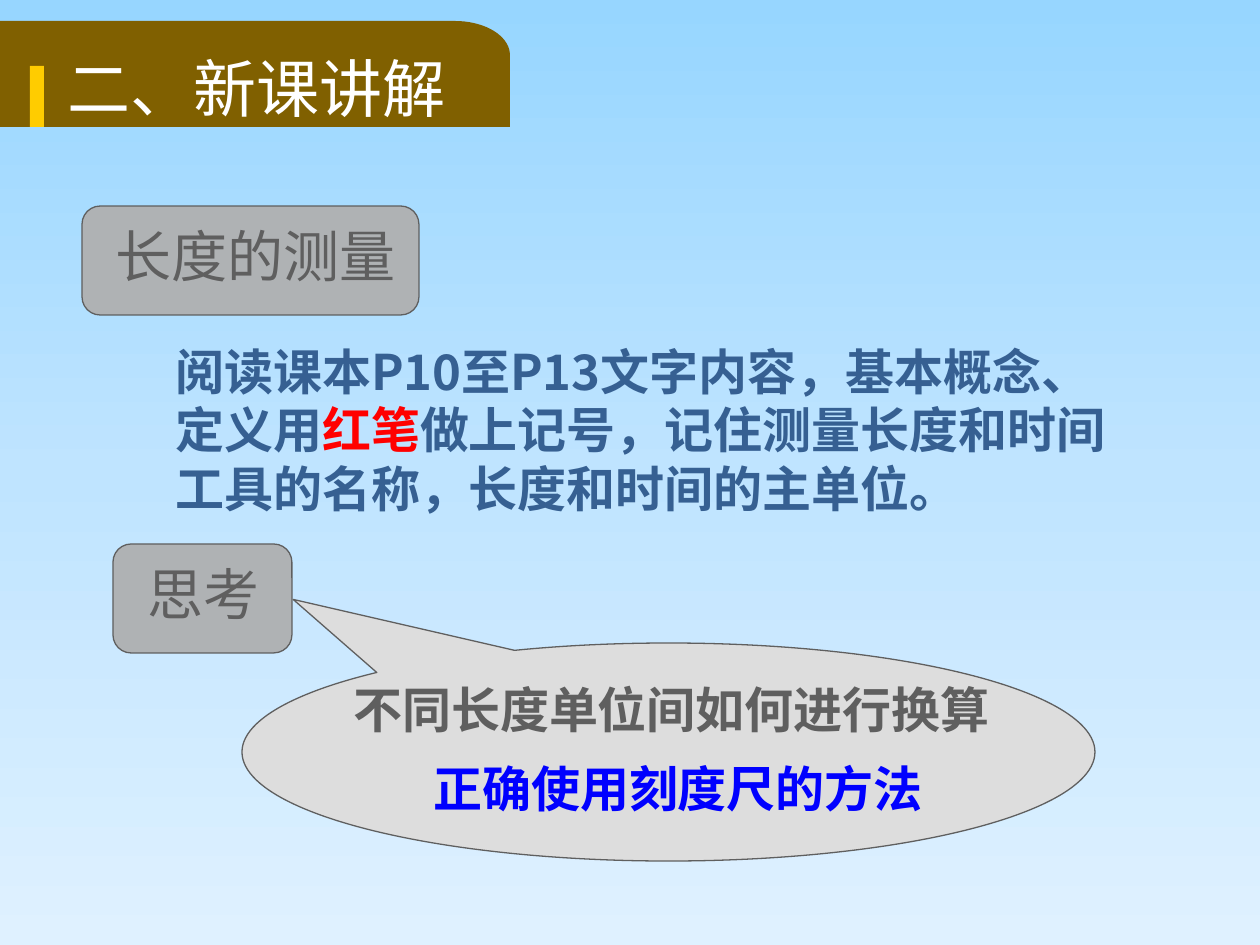
import copy
import math

from lxml import etree
from pptx import Presentation
from pptx.dml.color import RGBColor
from pptx.enum.shapes import MSO_SHAPE
from pptx.enum.text import MSO_ANCHOR, PP_ALIGN
from pptx.oxml.ns import qn
from pptx.util import Pt

LEFT, CENTER = PP_ALIGN.LEFT, PP_ALIGN.CENTER
TOP = MSO_ANCHOR.TOP
RECTANGLE = MSO_SHAPE.RECTANGLE
LABEL_BOX = MSO_SHAPE.FLOWCHART_ALTERNATE_PROCESS
CALLOUT = MSO_SHAPE.OVAL_CALLOUT

PX = 914400 / 126
CJK = "Noto Sans CJK SC"
GREY, NAVY, WHITE = "5F5F5F", "366092", "FFFFFF"


def write(holder, box, runs, size, font=CJK, bold=False, align=LEFT):
    """Place a text holder and fill it with (text, colour) runs."""
    holder.left, holder.top, holder.width, holder.height = [round(v * PX) for v in box]
    frame = holder.text_frame
    frame.word_wrap = True
    frame.vertical_anchor = TOP
    paragraph = frame.paragraphs[0]
    paragraph.alignment = align
    for text, color in runs:
        run = paragraph.add_run()
        run.text = text
        run.font.size = Pt(size)
        run.font.bold = bold
        run.font.color.rgb = RGBColor.from_string(color)
        run.font.name = font
        etree.SubElement(run.font._element, qn("a:ea"), typeface=font)
    return paragraph


def paint(shape, fill, line=None):
    shape.shadow.inherit = False
    shape.fill.solid()
    shape.fill.fore_color.rgb = RGBColor.from_string(fill)
    if line:
        shape.line.color.rgb = RGBColor.from_string(line)
        shape.line.width = Pt(0.75)
    else:
        shape.line.fill.background()


prs = Presentation()
prs.slide_width, prs.slide_height = round(1260 * PX), round(945 * PX)
slide = prs.slides.add_slide(prs.slide_layouts[5])
shapes = slide.shapes

# Sky gradient with three stops, running downwards
sky = slide.background.fill
sky.gradient()
sky.gradient_angle = 270
stop_list = slide.element.xpath(".//a:gsLst")[0]
middle_stop = copy.deepcopy(stop_list[0])
middle_stop.set("pos", "50000")
stop_list.insert(1, middle_stop)
for stop, color in zip(sky.gradient_stops, ("97D6FF", "BFE4FF", "DFF1FF")):
    stop.color.rgb = RGBColor.from_string(color)

# Heading tab with one rounded corner
tab_left, tab_top, tab_right, tab_bottom = -4, 21, 510, 127
corner_w, corner_h = 55, 34
outline = [(tab_left, tab_top)]
for degrees in range(0, 91, 5):
    angle = math.radians(degrees)
    outline.append((tab_right - corner_w + corner_w * math.sin(angle),
                    tab_top + corner_h - corner_h * math.cos(angle)))
outline += [(tab_right, tab_bottom), (tab_left, tab_bottom)]
points = [(round(x * PX), round(y * PX)) for x, y in outline]
builder = shapes.build_freeform(*points[0])
builder.add_line_segments(points[1:], close=True)
paint(builder.convert_to_shape(), "806000")

# Yellow marker, label boxes and speech bubble
for kind, box, fill, line in (
    (RECTANGLE, (30, 66, 14, 61), "FFCC00", None),
    (LABEL_BOX, (82, 206, 337, 109), "AFB2B4", GREY),
    (LABEL_BOX, (113, 544, 179, 109), "AFB2B4", GREY),
    (CALLOUT, (242, 643, 853, 218), "DDDDDD", GREY),
):
    shape = shapes.add_shape(kind, *[round(v * PX) for v in box])
    paint(shape, fill, line)
    if kind == CALLOUT:
        shape.adjustments[0], shape.adjustments[1] = -0.44, -0.7

# Heading, brought in front of its tab
title = shapes.title
heading = write(title, (55, 52, 470, 91), [("二、新课讲解", WHITE)], 36)
heading.line_spacing = 0.9
heading.space_before = Pt(10)
title.element.getparent().append(title.element)

# Labels, reading task and questions
reading_task = [
    ("阅读课本P10至P13文字内容，基本概念、定义用", NAVY),
    ("红笔", "FF0000"),
    ("做上记号，记住测量长度和时间工具的名称，长度和时间的主单位。", NAVY),
]
for box, runs, style in (
    ((103, 215, 316, 79), [("长度的测量", GREY)], {"size": 32, "font": "Arial"}),
    ((163, 335, 978, 189), reading_task, {"size": 28, "bold": True}),
    ((93, 553, 222, 79), [("思考", GREY)],
     {"size": 32, "font": "Arial", "align": CENTER}),
    ((341, 673, 692, 72), [("不同长度单位间如何进行换算", GREY)],
     {"size": 28, "bold": True}),
    ((421, 752, 615, 72), [("正确使用刻度尺的方法", "0000FF")],
     {"size": 28, "bold": True}),
):
    write(shapes.add_textbox(0, 0, 0, 0), box, runs, **style)

prs.save("out.pptx")
